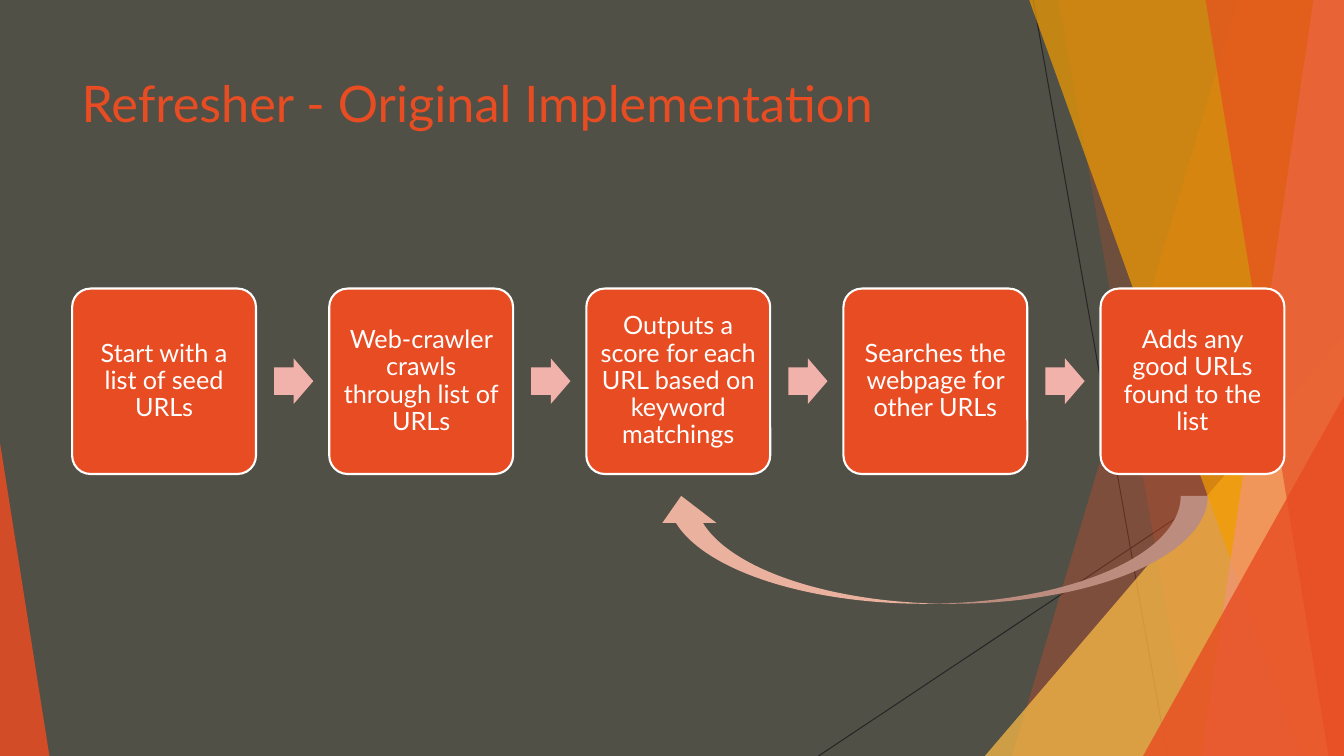
from dataclasses import dataclass

from lxml.etree import SubElement
from pptx import Presentation
from pptx.dml.color import RGBColor
from pptx.enum.shapes import MSO_CONNECTOR, MSO_SHAPE
from pptx.enum.text import MSO_ANCHOR, PP_ALIGN
from pptx.oxml.ns import qn
from pptx.util import Inches, Pt


@dataclass(frozen=True)
class Theme:
    font: str = "Lato"
    title_size: int = 36
    step_size: int = 18
    backdrop: str = "505046"
    accent: str = "E84C22"
    amber: str = "F49D00"
    gold: str = "FFBD47"
    coral: str = "F1947A"
    ray: str = "262626"
    step_text: str = "FFFFFF"
    step_arrow: str = "F2B2AC"
    loop_arrow: str = "EBB19F"


THEME = Theme()
WIDTH, HEIGHT = Inches(13.33), Inches(7.5)
STEP_LEFT, STEP_PITCH, STEP_WIDTH = 5.37, 19.13, 13.68
STEP_TOP, STEP_HEIGHT = 38.17, 24.53
ARROW_OFFSET, ARROW_TOP, ARROW_WIDTH, ARROW_HEIGHT = 15.02, 47.4, 2.92, 6.03
STEPS = [
    "Start with a list of seed URLs",
    "Web-crawler crawls through list of URLs",
    "Outputs a score for each URL based on keyword matchings",
    "Searches the webpage for other URLs",
    "Adds any good URLs found to the list",
]


def across(percent):
    return round(WIDTH * percent / 100)


def down(percent):
    return round(HEIGHT * percent / 100)


def frame(left, top, width, height):
    return across(left), down(top), across(width), down(height)


def paint(shape, color, opacity=100):
    shape.shadow.inherit = False
    shape.line.fill.background()
    shape.fill.solid()
    shape.fill.fore_color.rgb = RGBColor.from_string(color)
    if opacity < 100:
        tint = shape.fill._xPr.find(qn("a:solidFill"))[0]
        SubElement(tint, qn("a:alpha")).set("val", str(opacity * 1000))


def add_ray(slide, start, end):
    ray = slide.shapes.add_connector(
        MSO_CONNECTOR.STRAIGHT,
        across(start[0]), down(start[1]), across(end[0]), down(end[1]),
    )
    ray.line.color.rgb = RGBColor.from_string(THEME.ray)
    ray.line.width = Pt(0.75)
    SubElement(ray._element.spPr, qn("a:effectLst"))


def add_facet(slide, top_left, bottom_left, color, opacity):
    builder = slide.shapes.build_freeform(across(top_left), 0)
    builder.add_line_segments(
        [(WIDTH, 0), (WIDTH, HEIGHT), (across(bottom_left), HEIGHT)], close=True
    )
    paint(builder.convert_to_shape(), color, opacity)


def add_preset(slide, preset, box, color, opacity=100, adjustments=()):
    shape = slide.shapes.add_shape(preset, *frame(*box))
    for index, value in enumerate(adjustments):
        shape.adjustments[index] = value
    paint(shape, color, opacity)
    return shape


def add_peak(slide, left, top, width, apex, color, opacity):
    add_preset(slide, MSO_SHAPE.ISOSCELES_TRIANGLE,
               (left, top, width, 100 - top), color, opacity, [apex])


def write(shape, text, size, color):
    shape.text_frame.word_wrap = True
    shape.text_frame.text = text
    paragraph = shape.text_frame.paragraphs[0]
    paragraph.font.name = THEME.font
    paragraph.font.size = Pt(size)
    paragraph.font.color.rgb = RGBColor.from_string(color)
    return paragraph


def add_title(slide, text):
    title = slide.shapes.add_textbox(*frame(5.33, 8.93, 70.5, 19.2))
    write(title, text, THEME.title_size, THEME.accent)


def add_step(slide, left, text):
    step = add_preset(slide, MSO_SHAPE.ROUNDED_RECTANGLE,
                      (left, STEP_TOP, STEP_WIDTH, STEP_HEIGHT),
                      THEME.accent, adjustments=[0.1])
    step.line.color.rgb = RGBColor.from_string(THEME.step_text)
    step.line.width = Pt(1.5)
    body = step.text_frame
    body.margin_left = body.margin_right = Inches(0.07)
    body.margin_top = body.margin_bottom = Inches(0.07)
    body.vertical_anchor = MSO_ANCHOR.MIDDLE
    paragraph = write(step, text, THEME.step_size, THEME.step_text)
    paragraph.alignment = PP_ALIGN.CENTER
    paragraph.line_spacing = 0.9


def add_process(slide):
    for index, text in enumerate(STEPS):
        left = STEP_LEFT + index * STEP_PITCH
        add_step(slide, left, text)
        if index < len(STEPS) - 1:
            add_preset(slide, MSO_SHAPE.RIGHT_ARROW,
                       (left + ARROW_OFFSET, ARROW_TOP, ARROW_WIDTH, ARROW_HEIGHT),
                       THEME.step_arrow, adjustments=[0.6, 0.5])


def add_loop(slide):
    loop = add_preset(slide, MSO_SHAPE.CURVED_UP_ARROW,
                      (48.68, 65.6, 41.18, 14.27), THEME.loop_arrow)
    loop._element.spPr.find(qn("a:xfrm")).set("flipH", "1")


def add_backdrop(slide):
    slide.background.fill.solid()
    slide.background.fill.fore_color.rgb = RGBColor.from_string(THEME.backdrop)
    add_ray(slide, (76.88, 0), (86.85, 100))
    add_ray(slide, (100, 53.73), (60.9, 100))
    add_facet(slide, 92.1, 75.3, THEME.accent, 30)
    add_facet(slide, 78.75, 88.73, THEME.accent, 20)
    add_peak(slide, 73.28, 44.4, 26.72, 1, THEME.gold, 72)
    add_facet(slide, 76.58, 96.83, THEME.amber, 70)
    add_facet(slide, 97.73, 89.4, THEME.coral, 70)
    add_facet(slide, 89.7, 98.85, THEME.accent, 65)
    add_peak(slide, 85.05, 52.4, 14.95, 1, THEME.accent, 80)
    add_peak(slide, 0, 58.53, 3.68, 0, THEME.accent, 85)


def main():
    presentation = Presentation()
    presentation.slide_width, presentation.slide_height = WIDTH, HEIGHT
    slide = presentation.slides.add_slide(presentation.slide_layouts[6])
    add_backdrop(slide)
    add_title(slide, "Refresher - Original Implementation")
    add_process(slide)
    add_loop(slide)
    presentation.save("out.pptx")


if __name__ == "__main__":
    main()
